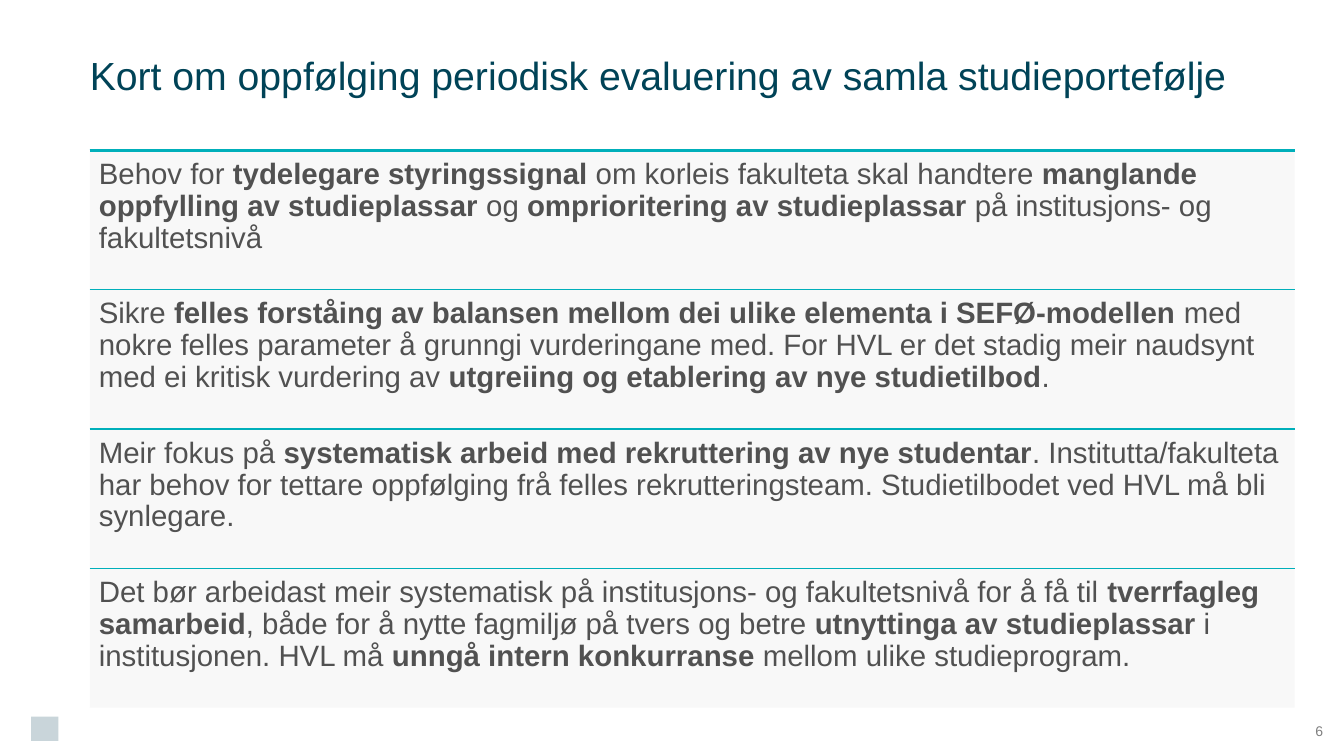
from lxml import etree
from pptx import Presentation
from pptx.dml.color import RGBColor
from pptx.enum.shapes import MSO_CONNECTOR, MSO_SHAPE
from pptx.enum.text import MSO_ANCHOR, PP_ALIGN
from pptx.oxml.ns import qn
from pptx.util import Inches, Pt

TITLE = "Kort om oppfølging periodisk evaluering av samla studieportefølje"
PAGE_NUMBER = "6"
# Each point is a list of spans that alternate between regular and bold.
POINTS = [
    ["Behov for ", "tydelegare styringssignal ", "om korleis fakulteta skal handtere ",
     "manglande oppfylling av studieplassar ", "og ", "omprioritering av studieplassar ",
     "på institusjons- og fakultetsnivå"],
    ["Sikre ", "felles forståing av balansen mellom dei ulike elementa i SEFØ-modellen ",
     "med nokre felles parameter å grunngi vurderingane med. For HVL er det stadig meir "
     "naudsynt med ei kritisk vurdering av ",
     "utgreiing og etablering av nye studietilbod", "."],
    ["Meir fokus på ", "systematisk arbeid med rekruttering av nye studentar",
     ". Institutta/fakulteta har behov for tettare oppfølging frå felles "
     "rekrutteringsteam. Studietilbodet ved HVL må bli synlegare."],
    ["Det bør arbeidast meir systematisk på institusjons- og fakultetsnivå for å få til ",
     "tverrfagleg samarbeid", ", både for å nytte fagmiljø på tvers og betre ",
     "utnyttinga av studieplassar ", "i institusjonen. HVL må ",
     "unngå intern konkurranse ", "mellom ulike studieprogram."],
]
COLORS = {"title": "004357", "text": "515151", "number": "808080",
          "rule": "00AFBA", "panel": "F2F2F2", "mark": "C9D5DA"}
FONT = "Arial"
WIDTH, HEIGHT = 13.33, 7.5
LEFT, TOP = 0.89, 1.49
PANEL_WIDTH, PANEL_HEIGHT = 11.95, 5.53
ROW_HEIGHT = PANEL_HEIGHT / len(POINTS)
CORNER = 0.49
PADDING = 0.09


def color(name):
    return RGBColor.from_string(COLORS[name])


def add_block(page, preset, left, top, width, height, fill):
    block = page.shapes.add_shape(preset, Inches(left), Inches(top),
                                  Inches(width), Inches(height))
    block.shadow.inherit = False
    block.line.fill.background()
    block.fill.solid()
    block.fill.fore_color.rgb = color(fill)
    return block


def add_rule(page, top, weight):
    rule = page.shapes.add_connector(MSO_CONNECTOR.STRAIGHT, Inches(LEFT), Inches(top),
                                     Inches(LEFT + PANEL_WIDTH), Inches(top))
    rule.line.color.rgb = color("rule")
    rule.line.width = Pt(weight)
    etree.SubElement(rule._element.spPr, qn("a:effectLst"))


def set_frame(box, inset, anchor):
    frame = box.text_frame
    frame.word_wrap = True
    frame.vertical_anchor = anchor
    frame.margin_left = frame.margin_right = Inches(inset)
    frame.margin_top = frame.margin_bottom = Inches(inset)
    return frame.paragraphs[0]


def add_text_box(page, left, top, width, height, inset, anchor):
    box = page.shapes.add_textbox(Inches(left), Inches(top), Inches(width), Inches(height))
    return set_frame(box, inset, anchor)


def add_span(para, text, size, name, bold=False):
    span = para.add_run()
    span.text = text
    span.font.name = FONT
    span.font.size = Pt(size)
    span.font.bold = bold
    span.font.color.rgb = color(name)


def add_title(page):
    title = page.shapes.title
    title.left, title.top = Inches(LEFT), Inches(0)
    title.width, title.height = Inches(PANEL_WIDTH), Inches(TOP)
    para = set_frame(title, 0, MSO_ANCHOR.MIDDLE)
    para.alignment = PP_ALIGN.LEFT
    add_span(para, TITLE, 28, "title")


def add_panel(page):
    panel = add_block(page, MSO_SHAPE.RECTANGLE, LEFT, TOP, PANEL_WIDTH, PANEL_HEIGHT, "panel")
    shade = panel._element.spPr.find(qn("a:solidFill"))[0]
    etree.SubElement(shade, qn("a:alpha"), val="50000")
    add_rule(page, TOP, 2)


def add_point(page, row, spans):
    top = TOP + row * ROW_HEIGHT
    add_rule(page, top, 1)
    para = add_text_box(page, LEFT, top, PANEL_WIDTH, ROW_HEIGHT, PADDING, MSO_ANCHOR.TOP)
    para.line_spacing = 0.9
    for index, text in enumerate(spans):
        add_span(para, text, 21, "text", bold=index % 2 == 1)


def main():
    deck = Presentation()
    deck.slide_width, deck.slide_height = Inches(WIDTH), Inches(HEIGHT)
    page = deck.slides.add_slide(deck.slide_layouts[5])
    add_block(page, MSO_SHAPE.RECTANGLE, 0.31, 7.11, 0.27, 0.24, "mark")
    add_panel(page)
    add_title(page)
    number = add_text_box(page, WIDTH - CORNER, HEIGHT - CORNER, CORNER, CORNER,
                          0, MSO_ANCHOR.MIDDLE)
    number.alignment = PP_ALIGN.CENTER
    number.space_after = Pt(6)
    add_span(number, PAGE_NUMBER, 10, "number")
    for row, spans in enumerate(POINTS):
        add_point(page, row, spans)
    deck.save("out.pptx")


if __name__ == "__main__":
    main()
